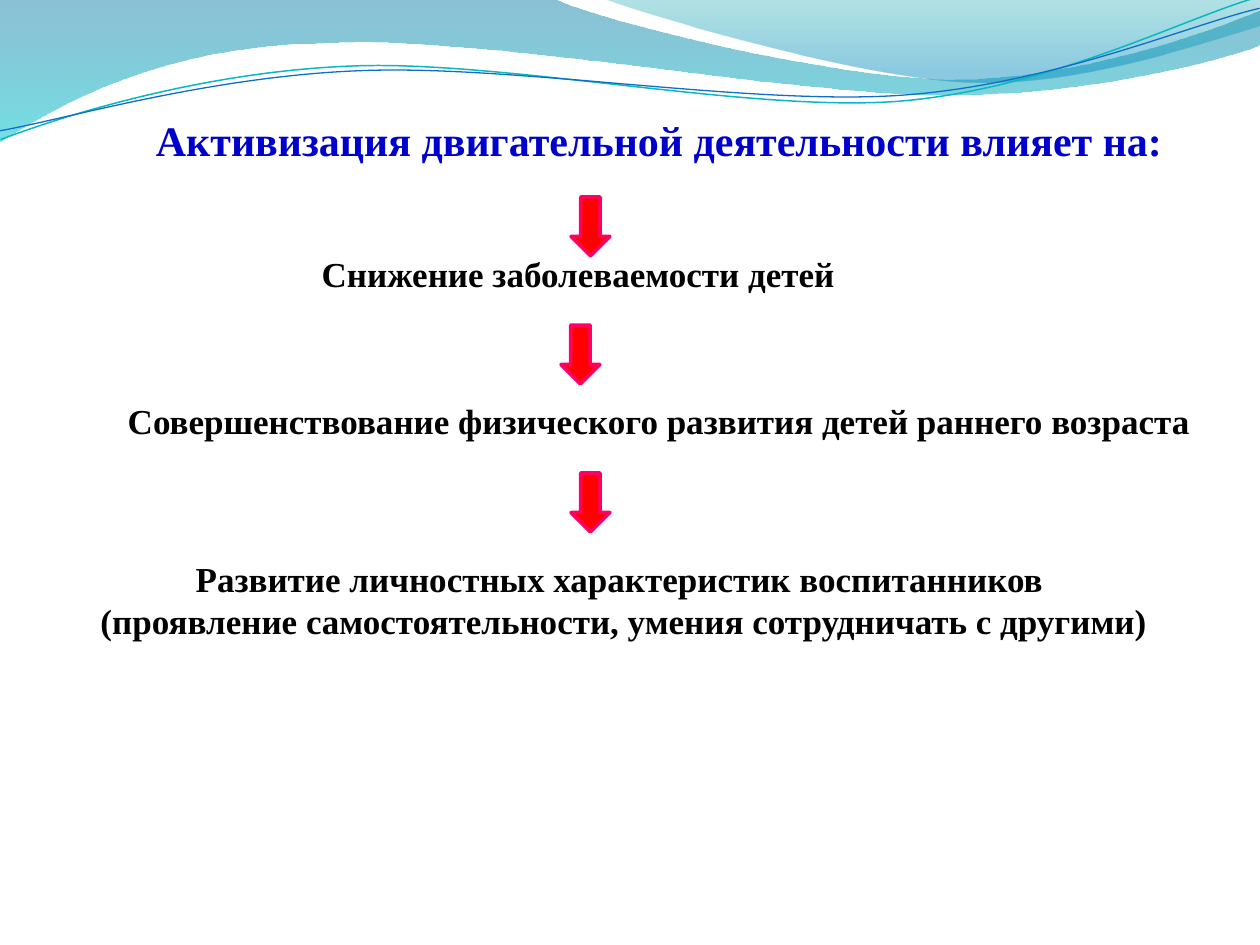
from lxml.etree import SubElement
from pptx import Presentation
from pptx.dml.color import RGBColor
from pptx.enum.shapes import MSO_SHAPE as SHAPE
from pptx.enum.text import MSO_ANCHOR as ANCHOR, MSO_AUTO_SIZE as AUTO, PP_ALIGN as ALIGN
from pptx.oxml.ns import qn
from pptx.util import Pt

PX = 914400 / 126
rgb = RGBColor.from_string

prs = Presentation()
prs.slide_width, prs.slide_height = round(1260 * PX), round(945 * PX)
s = prs.slides.add_slide(prs.slide_layouts[6])


def add_wave(start, segments, close):
    points = [pt for seg in segments for pt in zip(seg[::2], seg[1::2])]
    builder = s.shapes.build_freeform(*start, scale=PX)
    builder.add_line_segments(points, close=close)
    sp = builder.convert_to_shape()
    sp.shadow.inherit = False
    lines = list(sp.element.spPr.iter(qn("a:lnTo")))
    for seg in segments:
        parts, lines = lines[:len(seg) // 2], lines[len(seg) // 2:]
        if len(parts) == 3:
            curve = parts[0].makeelement(qn("a:cubicBezTo"))
            parts[0].addprevious(curve)
            for part in parts:
                curve.append(part[0])
                part.getparent().remove(part)
    return sp


def add_text(text, box, size=20, color="000000", wrap=True, shape=None):
    box = [round(v * PX) for v in box]
    sp = s.shapes.add_shape(shape, *box) if shape else s.shapes.add_textbox(*box)
    tf = sp.text_frame
    tf.word_wrap = wrap
    tf.auto_size = AUTO.SHAPE_TO_FIT_TEXT
    tf.vertical_anchor = ANCHOR.MIDDLE if shape else ANCHOR.TOP
    for i, line in enumerate(text.split("\n")):
        p = tf.add_paragraph() if i else tf.paragraphs[0]
        p.alignment = ALIGN.CENTER
        r = p.add_run()
        r.text = line
        r.font.name = "Times New Roman"
        r.font.size = Pt(size)
        r.font.bold = True
        r.font.color.rgb = rgb(color)
    return sp


bands = [
    ((0, 0),
     [(554, -1), (600, 21, 837, 79, 955, 79), (1075, 79, 1207, 33, 1260, 11),
      (1261, 45), (1239, 55, 1096, 96, 940, 95), (784, 94, 481, 35, 324, 43),
      (163, 45, 58, 105, -1, 142)],
     [(0, "0074A1", 45), (1, "00C6CF", 55)]),
    ((604, -1),
     [(641, 14, 859, 78, 969, 82), (1079, 87, 1211, 40, 1260, 26), (1260, 0)],
     [(0, "00A1A9", 30), (0.8, "008BBF", 45)]),
]
for start, segments, stops in bands:
    sp = add_wave(start, segments, True)
    sp.line.fill.background()
    sp.fill.gradient()
    sp.fill.gradient_angle = 270
    for stop, (position, color, _) in zip(sp.fill.gradient_stops, stops):
        stop.position = position
        stop.color.rgb = rgb(color)
    for clr, (_, _, alpha) in zip(sp.element.spPr.iter(qn("a:srgbClr")), stops):
        SubElement(clr, qn("a:alpha"), val=str(alpha * 1000))

curves = [
    ((-2, 110),
     [(59, 90, 200, 52, 350, 53), (499, 53, 745, 118, 896, 114),
      (1048, 109, 1184, 45, 1260, 27)], "0AB8BF", 0.85),
    ((-2, 101),
     [(57, 94, 207, 57, 357, 58), (509, 58, 750, 112, 902, 108),
      (1052, 104, 1188, 52, 1262, 38)], "0F6FC6", 0.75),
]
for start, segments, color, width in curves:
    sp = add_wave(start, segments, False)
    sp.rotation = 357.3
    sp.fill.background()
    sp.line.color.rgb = rgb(color)
    sp.line.width = Pt(width)

title = add_text("Активизация двигательной деятельности влияет на:", (138, 108, 1042, 63),
                 size=24, color="0000CC", wrap=False, shape=SHAPE.RECTANGLE)
title.shadow.inherit = False
title.fill.solid()
title.fill.fore_color.rgb = rgb("FFFFFF")
title.line.color.rgb = rgb("FFFFFF")
title.line.width = Pt(2)

effects = [
    ((571, 197), "Снижение заболеваемости детей ", (246, 246, 673, 55)),
    ((561, 325), "Совершенствование физического развития детей раннего возраста",
     (88, 393, 1142, 55)),
    ((571, 473), "Развитие личностных характеристик воспитанников\n"
     " (проявление самостоятельности, умения сотрудничать с другими)",
     (79, 551, 1081, 97)),
]
for (x, y), text, box in effects:
    sp = s.shapes.add_shape(SHAPE.DOWN_ARROW, *[round(v * PX) for v in (x, y, 39, 59)])
    sp.shadow.inherit = False
    sp.fill.solid()
    sp.fill.fore_color.rgb = rgb("FF0000")
    sp.line.color.rgb = rgb("FF0066")
    sp.line.width = Pt(2)
    add_text(text, box)

prs.save("out.pptx")
